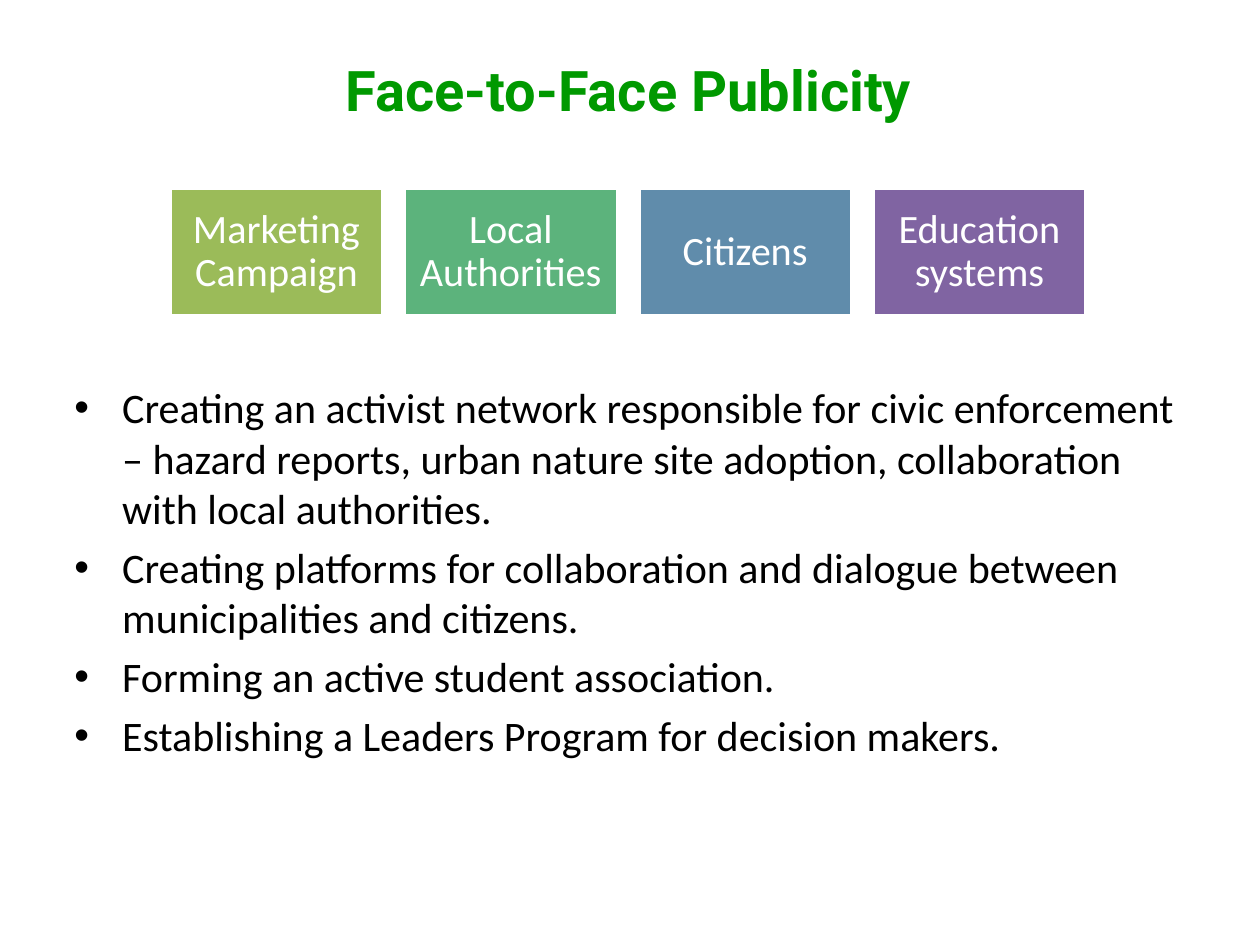
from lxml import etree
from pptx import Presentation
from pptx.dml.color import RGBColor
from pptx.enum.shapes import MSO_SHAPE
from pptx.enum.text import MSO_ANCHOR, MSO_AUTO_SIZE, PP_ALIGN
from pptx.oxml.ns import qn
from pptx.util import Inches, Pt

RECTANGLE = MSO_SHAPE.RECTANGLE
MIDDLE, TOP = MSO_ANCHOR.MIDDLE, MSO_ANCHOR.TOP
CENTER, LEFT = PP_ALIGN.CENTER, PP_ALIGN.LEFT
NO_AUTOFIT = MSO_AUTO_SIZE.NONE

COLORS = {
    "title": "009900",
    "text": "000000",
    "white": "FFFFFF",
    "lime": "9BBB59",
    "green": "5CB37C",
    "blue": "608CAB",
    "purple": "8064A2",
}

AUDIENCES = [
    ("Marketing Campaign", "lime"),
    ("Local Authorities", "green"),
    ("Citizens", "blue"),
    ("Education systems", "purple"),
]

ACTIONS = [
    "Creating an activist network responsible for civic enforcement – hazard "
    "reports, urban nature site adoption, collaboration with local authorities.",
    "Creating platforms for collaboration and dialogue between municipalities and citizens.",
    "Forming an active student association.",
    "Establishing a Leaders Program for decision makers.",
]


class SlideBuilder:
    """Holds the text style and the slide being filled."""

    heading_font = "Roboto"
    body_font = "Calibri"

    def __init__(self, slide):
        self.slide = slide

    def color(self, name):
        return RGBColor.from_string(COLORS[name])

    def place(self, shape, left, top, width, height):
        shape.left, shape.top = Inches(left), Inches(top)
        shape.width, shape.height = Inches(width), Inches(height)

    def format_para(self, para, font, size, color, align, bold=False):
        para.alignment = align
        for span in para.runs:
            span.font.name = font
            span.font.size = Pt(size)
            span.font.bold = bold
            span.font.color.rgb = self.color(color)

    def title(self, text, *bounds):
        title = self.slide.shapes.title
        self.place(title, *bounds)
        frame = title.text_frame
        frame.text = text
        frame.vertical_anchor = MIDDLE
        self.format_para(frame.paragraphs[0], self.heading_font, 32, "title", CENTER, bold=True)

    def box(self, text, fill, *bounds):
        box = self.slide.shapes.add_shape(RECTANGLE, *map(Inches, bounds))
        box.shadow.inherit = False
        box.fill.solid()
        box.fill.fore_color.rgb = self.color(fill)
        box.line.color.rgb = self.color("white")
        box.line.width = Pt(2)
        frame = box.text_frame
        frame.text = text
        frame.word_wrap = True
        frame.vertical_anchor = MIDDLE
        frame.margin_left = frame.margin_right = Inches(0.1)
        frame.margin_top = frame.margin_bottom = Inches(0.1)
        para = frame.paragraphs[0]
        para.line_spacing = 0.9
        self.format_para(para, self.body_font, 23, "white", CENTER)

    def bullets(self, items, *bounds):
        body = self.slide.placeholders[1]
        self.place(body, *bounds)
        frame = body.text_frame
        frame.auto_size = NO_AUTOFIT
        frame.vertical_anchor = TOP
        for index, item in enumerate(items):
            para = frame.add_paragraph() if index else frame.paragraphs[0]
            para.text = item
            properties = para._p.get_or_add_pPr()
            properties.set("marL", str(Inches(0.38)))
            properties.set("indent", str(Inches(-0.38)))
            etree.SubElement(properties, qn("a:buChar"), char="•")
            para.space_before = Pt(4.8 if index else 0)
            self.format_para(para, self.body_font, 24, "text", LEFT)


def main():
    deck = Presentation()
    deck.slide_width, deck.slide_height = Inches(10), Inches(7.5)
    page = SlideBuilder(deck.slides.add_slide(deck.slide_layouts[1]))

    # Title
    page.title("Face-to-Face Publicity", 0.49, 0.08, 9, 1.25)

    # Row of audience boxes
    first_left, step = 1.35, 1.86
    for column, (label, fill) in enumerate(AUDIENCES):
        page.box(label, fill, first_left + column * step, 1.49, 1.69, 1.02)

    # List of actions
    page.bullets(ACTIONS, 0.49, 2.98, 9.13, 3.17)

    deck.save("out.pptx")


if __name__ == "__main__":
    main()
